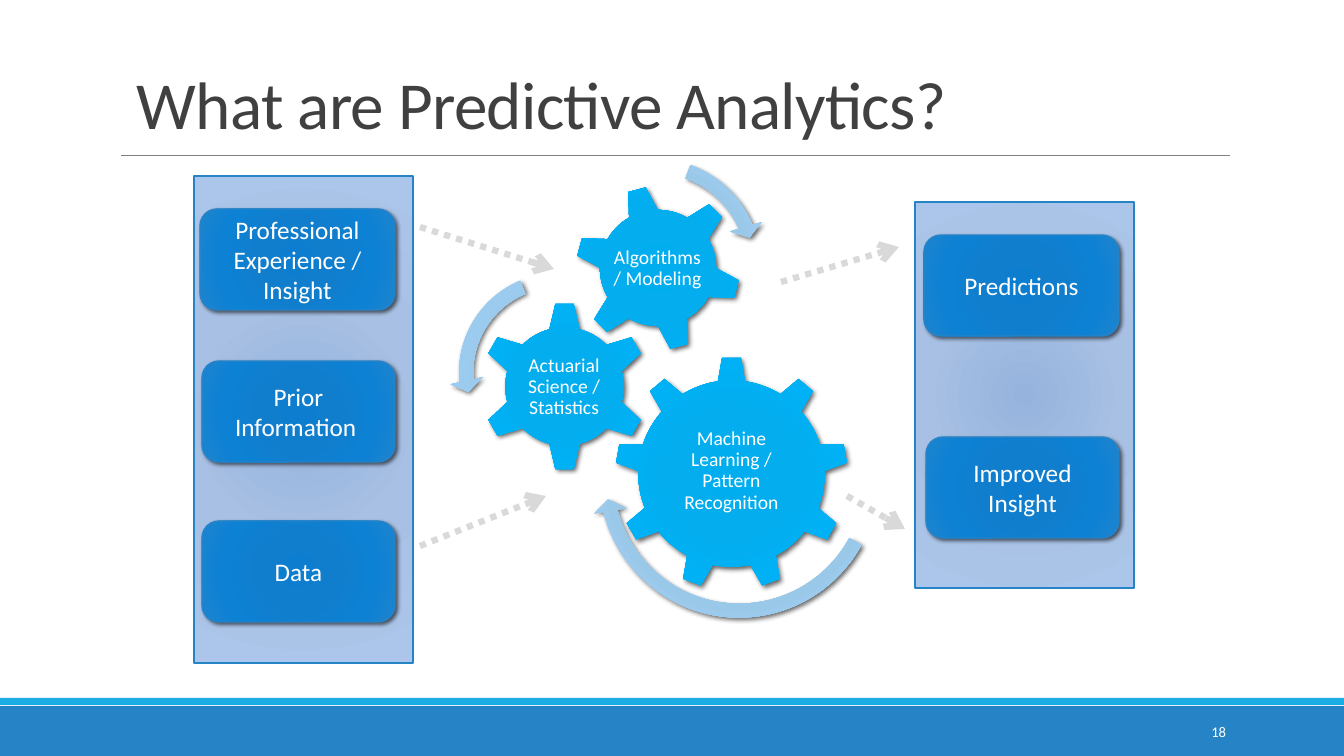
import pptx
import pptx.util
import pptx.dml.color
import pptx.enum.shapes
import pptx.enum.text
import pptx.oxml
import lxml.etree

NS = 'xmlns:a="http://schemas.openxmlformats.org/drawingml/2006/main"'
PX = 914400 / 100.8
SHAPE = pptx.enum.shapes.MSO_SHAPE
ANCHOR = pptx.enum.text.MSO_ANCHOR
ALIGN = pptx.enum.text.PP_ALIGN
RGB = pptx.dml.color.RGBColor.from_string

COLORS = {
    "footer": "2683C6", "stripe": "1CADE4", "rule": "808080",
    "title": "404040", "white": "FFFFFF", "dots": "D9D9D9", "shadow": "000000",
}
GRADIENTS = {
    "panel": [(0, "95B3DD"), (45, "A7C0E3"), (100, "ACC6EB")],
    "gear": [(0, "00ADEF"), (34, "03ADEE"), (70, "00B1F5"), (100, "12B1EE")],
    "swirl": [(0, "97C6E8"), (34, "9AC8E9"), (70, "9BCBEE"), (100, "A9D3F3")],
    "box": [(0, "0D7ECF"), (34, "117ECD"), (70, "0D81D4"), (100, "1E84CE")],
}

prs = pptx.Presentation()
prs.slide_width = round(1344 * PX)
prs.slide_height = round(756 * PX)
slide = prs.slides.add_slide(prs.slide_layouts[6])


def add_shape(kind, box, fill, outline=False, blur=0):
    sp = slide.shapes.add_shape(kind, *[round(v * PX) for v in box])
    sp.shadow.inherit = False
    if fill in GRADIENTS:
        stops = "".join(
            f'<a:gs pos="{pos * 1000}"><a:srgbClr val="{color}"/></a:gs>'
            for pos, color in GRADIENTS[fill])
        grad = pptx.oxml.parse_xml(
            f'<a:gradFill {NS} rotWithShape="1"><a:gsLst>{stops}</a:gsLst><a:path path="circle">'
            '<a:fillToRect l="100000" t="100000" r="100000" b="100000"/></a:path></a:gradFill>')
        sp._element.spPr.find(pptx.oxml.ns.qn("a:prstGeom")).addnext(grad)
    else:
        sp.fill.solid()
        sp.fill.fore_color.rgb = RGB(COLORS[fill])
    if outline:
        sp.line.color.rgb = RGB(COLORS["footer"])
        sp.line.width = pptx.util.Pt(1)
    else:
        sp.line.fill.background()
    if blur:
        effects = sp._element.spPr.find(pptx.oxml.ns.qn("a:effectLst"))
        effects.append(pptx.oxml.parse_xml(
            f'<a:outerShdw {NS} blurRad="{round(blur * 12700)}" dist="25400" dir="2700000" '
            f'rotWithShape="0"><a:srgbClr val="{COLORS["shadow"]}">'
            '<a:alpha val="60000"/></a:srgbClr></a:outerShdw>'))
    return sp


def write(sp, text, size, color="white", align=ALIGN.CENTER, anchor=ANCHOR.MIDDLE, spacing=1.0):
    tf = sp.text_frame
    tf.word_wrap = True
    tf.vertical_anchor = anchor
    tf.text = text
    for p in tf.paragraphs:
        p.alignment = align
        p.line_spacing = spacing
        p.font.size = pptx.util.Pt(size)
        p.font.name = "Calibri"
        p.font.color.rgb = RGB(COLORS[color])
    return tf


add_shape(SHAPE.RECTANGLE, (0, 706, 1344, 50), "footer")
add_shape(SHAPE.RECTANGLE, (0, 698, 1344, 7), "stripe")
for box in [(194, 176, 219, 487), (915, 202, 219, 386)]:
    add_shape(SHAPE.RECTANGLE, box, "panel", outline=True)

title = slide.shapes.add_textbox(*[round(v * PX) for v in (127, -12, 1109, 160)])
tf = write(title, "What are Predictive Analytics?", 48, "title", ALIGN.LEFT, ANCHOR.BOTTOM, 0.85)
tf.paragraphs[0].runs[0].font._element.set("spc", "-50")

gears = [
    (SHAPE.GEAR_9, (615, 357, 233), 0, (662, 411, 139, 120), "Machine Learning / Pattern Recognition"),
    (SHAPE.GEAR_6, (480, 302, 169), 0, (522, 345, 84, 84), "Actuarial Science / Statistics"),
    (SHAPE.GEAR_6, (575, 185, 166), 345, (611, 222, 93, 93), "Algorithms / Modeling"),
]
for kind, (x, y, side), angle, label, text in gears:
    add_shape(kind, (x, y, side, side), "gear", blur=3.5).rotation = angle
    tb = slide.shapes.add_textbox(*[round(v * PX) for v in label])
    tf = write(tb, text, 14, spacing=0.9)
    tf.margin_left = tf.margin_right = tf.margin_top = tf.margin_bottom = round(2 * PX)

swirls = [
    (SHAPE.CIRCULAR_ARROW, (590, 329, 298), 123.9, (0.047, 2.99, 25.072, 158.807, 0.055)),
    (SHAPE.LEFT_CIRCULAR_ARROW, (450, 264, 217), 0, (0.065, 4.3, 104.891, 148.378, 0.075)),
    (SHAPE.CIRCULAR_ARROW, (536, 149, 234), 115.2, (0.06, 3.941, 133.138, 105.082, 0.07)),
]
for kind, (x, y, side), angle, adjustments in swirls:
    sp = add_shape(kind, (x, y, side, side), "swirl", blur=3.5)
    sp.rotation = angle
    for i, value in enumerate(adjustments):
        sp.adjustments[i] = value

boxes = [
    (200, 209, 195, "Professional\nExperience / Insight"),
    (202, 361, 193, "Prior Information "),
    (202, 521, 193, "Data"),
    (924, 235, 195, "Predictions"),
    (926, 437, 193, "Improved\nInsight"),
]
for x, y, w, text in boxes:
    sp = add_shape(SHAPE.ROUNDED_RECTANGLE, (x, y, w, 101), "box", outline=True, blur=3)
    write(sp, text, 18)

lines = [
    ((121, 155, 1230, 155), "rule", 0.5),
    ((420, 227, 554, 269), "dots", 4.5),
    ((420, 546, 546, 496), "dots", 4.5),
    ((781, 282, 899, 247), "dots", 4.5),
    ((847, 496, 905, 529), "dots", 4.5),
]
for ends, color, width in lines:
    cn = slide.shapes.add_connector(
        pptx.enum.shapes.MSO_CONNECTOR.STRAIGHT, *[round(v * PX) for v in ends])
    cn.line.color.rgb = RGB(COLORS[color])
    cn.line.width = pptx.util.Pt(width)
    if color == "dots":
        ln = cn.line._get_or_add_ln()
        ln.append(pptx.oxml.parse_xml(f'<a:prstDash {NS} val="sysDot"/>'))
        ln.append(pptx.oxml.parse_xml(f'<a:tailEnd {NS} type="arrow"/>'))
    lxml.etree.SubElement(cn._element.spPr, pptx.oxml.ns.qn("a:effectLst"))

number = slide.shapes.add_textbox(*[round(v * PX) for v in (1092, 712, 144, 40)])
write(number, "18", 10.5, align=ALIGN.RIGHT)

prs.save("out.pptx")
